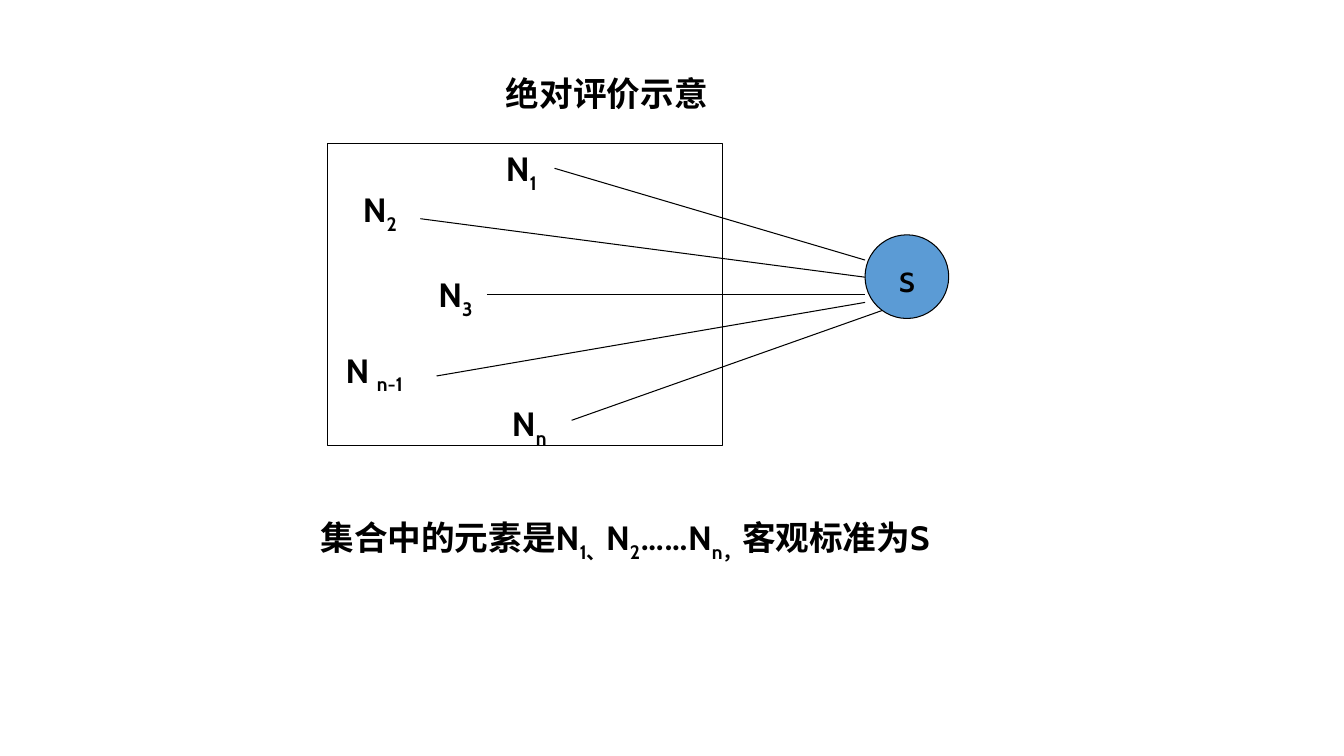
from dataclasses import dataclass

from lxml.etree import SubElement
from pptx import Presentation
from pptx.dml.color import RGBColor
from pptx.enum.shapes import MSO_CONNECTOR as Connector, MSO_SHAPE as Shape
from pptx.enum.text import MSO_ANCHOR as Anchor, MSO_AUTO_SIZE as AutoSize, PP_ALIGN as Align
from pptx.oxml.ns import qn
from pptx.util import Inches, Pt


@dataclass(frozen=True)
class Theme:
    ink: RGBColor = RGBColor(0x00, 0x00, 0x00)
    standard_fill: RGBColor = RGBColor(0x5B, 0x9B, 0xD5)
    font: str = "Cabin"
    ellipsis_font: str = "Calibri"
    text_size: Pt = Pt(24)
    standard_size: Pt = Pt(28)
    line_width: Pt = Pt(0.75)
    subscript: str = "-25000"


THEME = Theme()

ELEMENTS = [
    ("N", "1", (4.92, 1.42, 0.6), (5.5, 1.67), (8.58, 2.58)),
    ("N", "2", (3.5, 1.83, 0.6), (4.17, 2.17), (8.58, 2.75)),
    ("N", "3", (4.25, 2.67, 0.6), (4.83, 2.92), (8.58, 2.92)),
    ("N ", "n-1", (3.33, 3.42, 0.94), (4.33, 3.73), (8.58, 3)),
    ("N", "n", (4.98, 3.95, 0.6), (5.67, 4.17), (8.75, 3.08)),
]

CAPTION = [
    ("集合中的元素是N", False),
    ("1、", True),
    ("N", False),
    ("2", True),
    ("……", False),
    ("N", False),
    ("n，", True),
    ("客观标准为S", False),
]


def add_run(paragraph, text, subscript=False, size=THEME.text_size, bold=True):
    run = paragraph.add_run()
    run.text = text
    run.font.name = THEME.ellipsis_font if text == "……" else THEME.font
    run.font.size = size
    run.font.bold = bold
    run.font.color.rgb = THEME.ink
    if subscript:
        run._r.get_or_add_rPr().set("baseline", THEME.subscript)


def add_text(slide, left, top, width, runs, wrap=False):
    box = slide.shapes.add_textbox(Inches(left), Inches(top), Inches(width), Inches(0.5))
    frame = box.text_frame
    frame.word_wrap = wrap
    frame.auto_size = AutoSize.SHAPE_TO_FIT_TEXT
    for text, subscript in runs:
        add_run(frame.paragraphs[0], text, subscript)


def add_outline(slide, kind, left, top, width, height):
    shape = slide.shapes.add_shape(
        kind, Inches(left), Inches(top), Inches(width), Inches(height)
    )
    shape.shadow.inherit = False
    shape.fill.background()
    shape.line.color.rgb = THEME.ink
    shape.line.width = THEME.line_width
    return shape


def add_standard(slide):
    circle = add_outline(slide, Shape.OVAL, 8.58, 2.33, 0.83, 0.83)
    circle.fill.solid()
    circle.fill.fore_color.rgb = THEME.standard_fill
    frame = circle.text_frame
    frame.word_wrap = False
    frame.vertical_anchor = Anchor.MIDDLE
    frame.paragraphs[0].alignment = Align.CENTER
    add_run(frame.paragraphs[0], "s", size=THEME.standard_size, bold=False)


def add_line(slide, start, end):
    points = [Inches(value) for value in (*start, *end)]
    connector = slide.shapes.add_connector(Connector.STRAIGHT, *points)
    connector.line.color.rgb = THEME.ink
    connector.line.width = THEME.line_width
    SubElement(connector._element.spPr, qn("a:effectLst"))


def main():
    presentation = Presentation()
    presentation.slide_width = Inches(13.33)
    presentation.slide_height = Inches(7.5)
    slide = presentation.slides.add_slide(presentation.slide_layouts[6])

    add_outline(slide, Shape.RECTANGLE, 3.25, 1.42, 3.92, 3)
    add_standard(slide)
    for letter, index, position, start, end in ELEMENTS:
        add_line(slide, start, end)
        add_text(slide, *position, [(letter, False), (index, True)])
    add_text(slide, 4.92, 0.67, 2.22, [("绝对评价示意", False)])
    add_text(slide, 3.08, 5.08, 7.18, CAPTION, wrap=True)

    presentation.save("out.pptx")


if __name__ == "__main__":
    main()
